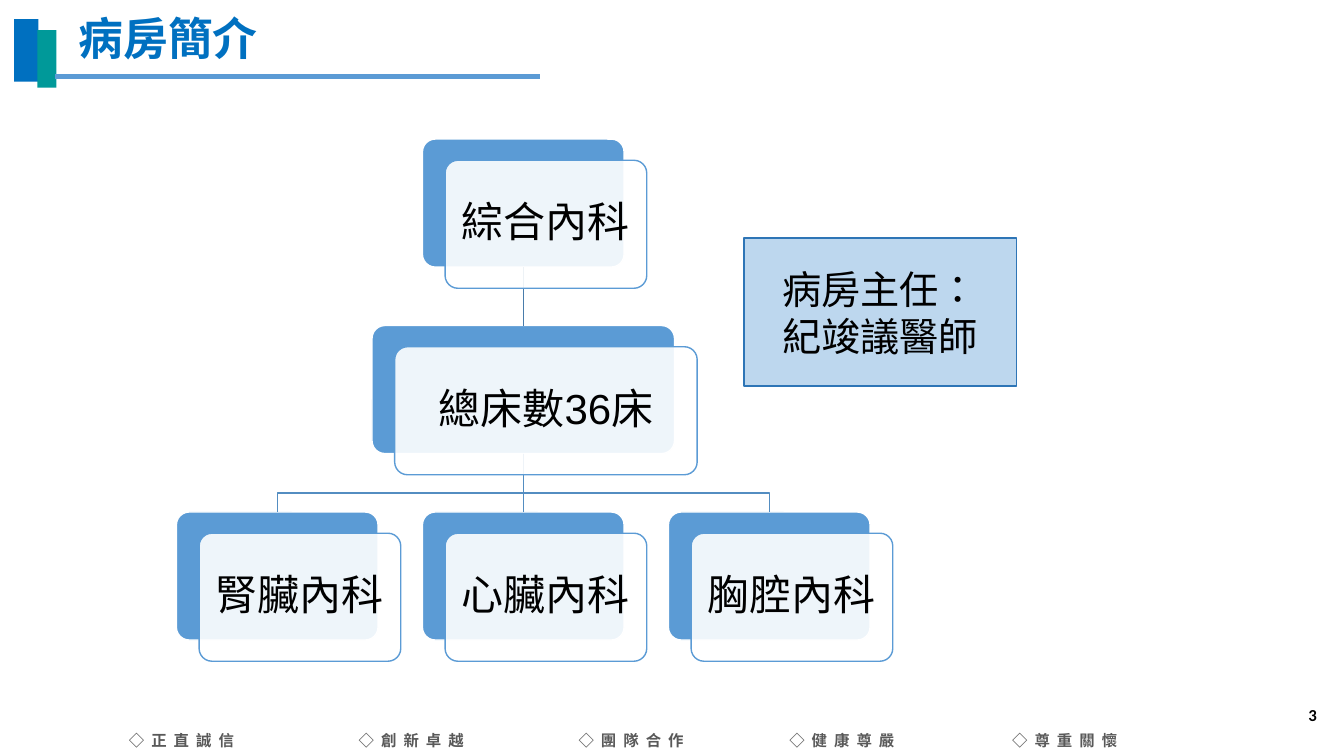
from dataclasses import dataclass

from pptx import Presentation
from pptx import util as u
from pptx.dml.color import RGBColor
from pptx.enum import lang, shapes, text
from pptx.oxml import xmlchemy
from pptx.oxml.ns import qn

CJK = "Noto Sans CJK SC"
BLUE = "5B9BD5"
LINK = "538DC1"
CARD_H = 1.27
SHIFT_X, SHIFT_Y = 0.225, 0.21
CENTER_X, BRANCH_GAP = 5.19, 2.44
TOP_Y, MIDDLE_Y, BOTTOM_Y = 1.38, 3.23, 5.08
BRANCH_Y = 4.89


@dataclass
class Card:
    label: str
    center: float
    top: float
    width: float = 2

    @property
    def left(self) -> float:
        return self.center - self.width / 2


@dataclass
class Style:
    size: float
    color: str = "000000"
    name: str = CJK
    bold: bool = False
    spacing: int = 0


@dataclass
class Block:
    left: float
    top: float
    width: float
    height: float
    fill: str
    line: str | None = None


CARDS = [
    Card("綜合內科", CENTER_X, TOP_Y),
    Card("總床數36床", CENTER_X, MIDDLE_Y, 3),
    Card("腎臟內科", CENTER_X - BRANCH_GAP, BOTTOM_Y),
    Card("心臟內科", CENTER_X, BOTTOM_Y),
    Card("胸腔內科", CENTER_X + BRANCH_GAP, BOTTOM_Y),
]
MOTTOS = {1.18: "正直誠信", 3.46: "創新卓越", 5.64: "團隊合作",
          7.73: "健康尊嚴", 9.94: "尊重關懷"}
ACCENTS = [Block(0.14, 0.19, 0.24, 0.62, "0070C0"),
           Block(0.37, 0.3, 0.19, 0.57, "009999")]
DIRECTOR = Block(7.38, 2.36, 2.7, 1.47, "BDD7EE", "2E75B6")


def rgb(value: str) -> RGBColor:
    return RGBColor.from_string(value)


def set_line(sp, color: str, width: float) -> None:
    sp.line.color.rgb = rgb(color)
    sp.line.width = u.Pt(width)


def clear_effects(cxn) -> None:
    cxn._element.spPr.append(xmlchemy.OxmlElement("a:effectLst"))


def write(tf, lines: list[str], style: Style, align=None, spacing=None) -> None:
    for i, line in enumerate(lines):
        p = tf.paragraphs[0] if i == 0 else tf.add_paragraph()
        p.alignment, p.line_spacing = align, spacing
        r = p.add_run()
        r.text = line
        formats = {"size": u.Pt(style.size), "name": style.name, "bold": style.bold,
                   "language_id": lang.MSO_LANGUAGE_ID.TRADITIONAL_CHINESE}
        for key, value in formats.items():
            setattr(r.font, key, value)
        r.font.color.rgb = rgb(style.color)
        rpr = r._r.get_or_add_rPr()
        east_asian = xmlchemy.OxmlElement("a:ea")
        east_asian.set("typeface", CJK)
        rpr.find(qn("a:latin")).addnext(east_asian)
        if style.spacing:
            rpr.set("spc", str(style.spacing * 100))


def add_label(s, box: tuple, content: str, style: Style) -> None:
    tf = s.shapes.add_textbox(*map(u.Inches, box)).text_frame
    tf.word_wrap = False
    tf.auto_size = text.MSO_AUTO_SIZE.SHAPE_TO_FIT_TEXT
    write(tf, [content], style)


def add_block(s, block: Block, rounded: bool = False):
    kind = shapes.MSO_SHAPE.ROUNDED_RECTANGLE if rounded else shapes.MSO_SHAPE.RECTANGLE
    box = (block.left, block.top, block.width, block.height)
    sp = s.shapes.add_shape(kind, *map(u.Inches, box))
    sp.shadow.inherit = False
    if rounded:
        sp.adjustments[0] = 0.1
    sp.fill.solid()
    sp.fill.fore_color.rgb = rgb(block.fill)
    if block.line:
        set_line(sp, block.line, 1)
    else:
        sp.line.fill.background()
    return sp


def add_back(s, card: Card):
    return add_block(s, Block(card.left, card.top, card.width, CARD_H, BLUE, "FFFFFF"), True)


def add_front(s, card: Card) -> None:
    sp = add_block(s, Block(card.left + SHIFT_X, card.top + SHIFT_Y,
                            card.width, CARD_H, "FFFFFF", BLUE), True)
    alpha = xmlchemy.OxmlElement("a:alpha")
    alpha.set("val", "90000")
    sp._element.spPr.find(qn("a:solidFill"))[0].append(alpha)
    tf = sp.text_frame
    margins = {f"margin_{side}": u.Inches(0.05) for side in ("left", "top", "right", "bottom")}
    for key, value in {**margins, "word_wrap": True,
                       "vertical_anchor": text.MSO_ANCHOR.MIDDLE}.items():
        setattr(tf, key, value)
    write(tf, [card.label], Style(30, name="Arial"), text.PP_ALIGN.CENTER, 0.9)


def add_link(s, parent, child, color: str) -> None:
    cxn = s.shapes.add_connector(shapes.MSO_CONNECTOR.STRAIGHT, 0, 0, 0, 0)
    cxn.begin_connect(parent, 2)
    cxn.end_connect(child, 0)
    set_line(cxn, color, 1)
    clear_effects(cxn)


def add_branch(s, parent: Card, child: Card) -> None:
    points = [(parent.center, BRANCH_Y), (child.center, BRANCH_Y), (child.center, child.top)]
    builder = s.shapes.build_freeform(u.Inches(parent.center),
                                      u.Inches(parent.top + CARD_H))
    builder.add_line_segments([(u.Inches(x), u.Inches(y)) for x, y in points], close=False)
    sp = builder.convert_to_shape()
    sp.shadow.inherit = False
    sp.fill.background()
    set_line(sp, LINK, 1)


def add_frame(s) -> None:
    for accent in ACCENTS:
        add_block(s, accent)
    rule = s.shapes.add_connector(shapes.MSO_CONNECTOR.STRAIGHT,
                                  *map(u.Inches, (0.55, 0.76, 5.36, 0.76)))
    set_line(rule, BLUE, 3)
    clear_effects(rule)
    for left, motto in MOTTOS.items():
        add_label(s, (left, 7.2, 1.26, 0.29), "◇" + motto,
                  Style(11, "595959", bold=True, spacing=5))
    number = s.shapes.add_textbox(*map(u.Inches, (10.16, 6.89, 3, 0.4))).text_frame
    number.word_wrap = True
    number.vertical_anchor = text.MSO_ANCHOR.MIDDLE
    write(number, ["3"], Style(12, name="Calibri", bold=True), text.PP_ALIGN.RIGHT)


def add_chart_of_wards(s) -> None:
    backs = [add_back(s, card) for card in CARDS]
    ward, beds, left, middle, right = backs
    add_link(s, ward, beds, "497CAB")
    add_link(s, beds, middle, LINK)
    for child in (CARDS[2], CARDS[4]):
        add_branch(s, CARDS[1], child)
    for card in CARDS:
        add_front(s, card)


def main() -> None:
    prs = Presentation()
    prs.slide_width, prs.slide_height = u.Inches(13.33), u.Inches(7.5)
    s = prs.slides.add_slide(prs.slide_layouts[6])
    add_frame(s)
    add_chart_of_wards(s)
    tf = add_block(s, DIRECTOR).text_frame
    tf.word_wrap = True
    tf.vertical_anchor = text.MSO_ANCHOR.MIDDLE
    write(tf, ["病房主任：", "紀竣議醫師"], Style(28), text.PP_ALIGN.CENTER)
    add_label(s, (0.68, 0.06, 2, 0.64), "病房簡介", Style(32, "0070C0", bold=True))
    prs.save("out.pptx")


if __name__ == "__main__":
    main()
